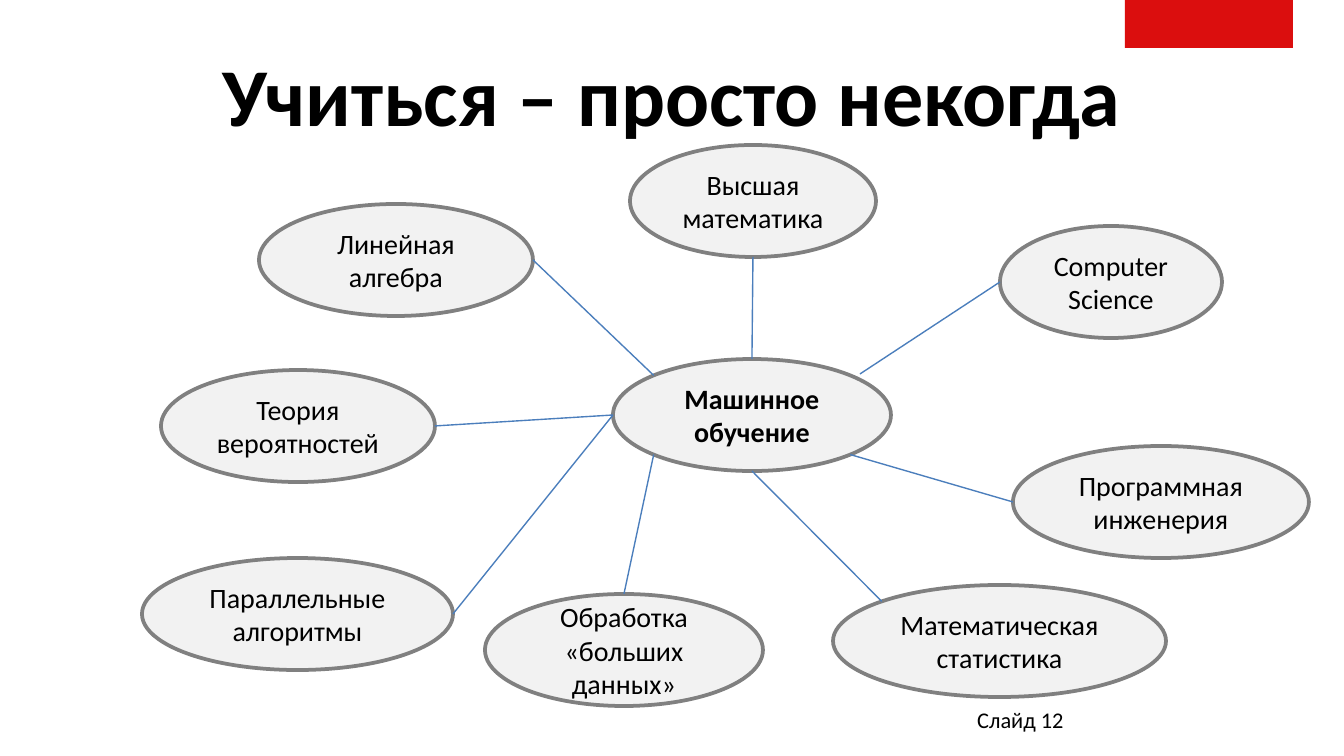
import math

from lxml import etree
from pptx import Presentation
from pptx import util as u
from pptx.dml.color import RGBColor
from pptx.enum import shapes, text
from pptx.oxml.ns import qn

# Content
TITLE = "Учиться – просто некогда"
FOOTER = "Слайд 12"
CORE = ("Машинное обучение", 613, 359, 278)
# Ellipse connection sites, counter-clockwise from the top
TOP, TOP_LEFT, LEFT, BOTTOM_LEFT, BOTTOM, BOTTOM_RIGHT, RIGHT = range(7)
# (label, left, top, width), site on the topic, site or free point at the core
TOPICS = [
    (("Computer Science", 1000, 226, 222), LEFT, (860, 374)),
    (("Высшая математика", 630, 145, 246), BOTTOM, TOP),
    (("Теория вероятностей", 161, 370, 274), RIGHT, LEFT),
    (("Математическая статистика", 833, 585, 333), TOP_LEFT, BOTTOM),
    (("Программная инженерия", 1013, 446, 296), LEFT, BOTTOM_RIGHT),
    (("Параллельные алгоритмы", 142, 558, 311), RIGHT, LEFT),
    (("Обработка «больших данных»", 485, 594, 278), TOP, BOTTOM_LEFT),
    (("Линейная алгебра", 259, 204, 274), RIGHT, TOP_LEFT),
]
OVAL_HEIGHT = 112

BLACK = RGBColor(0x00, 0x00, 0x00)
RED = RGBColor(0xDB, 0x0E, 0x0E)
PALE = RGBColor(0xF2, 0xF2, 0xF2)
GRAY = RGBColor(0x80, 0x80, 0x80)
BLUE = RGBColor(0x4B, 0x7E, 0xBC)
FONT = "Calibri"


def px(*lengths):
    return [round(n * 914400 / 134.4) for n in lengths]


def write(frame, words, size, bold=False, align=text.PP_ALIGN.CENTER):
    frame.word_wrap = True
    paragraph = frame.paragraphs[0]
    paragraph.alignment = align
    run = paragraph.add_run()
    run.text = words
    run.font.name, run.font.size, run.font.bold = FONT, u.Pt(size), bold
    run.font.color.rgb = BLACK


def add_oval(slide, label, left, top, width, bold=False):
    oval = slide.shapes.add_shape(shapes.MSO_SHAPE.OVAL, *px(left, top, width, OVAL_HEIGHT))
    oval.shadow.inherit = False
    oval.fill.solid()
    oval.fill.fore_color.rgb = PALE
    oval.line.color.rgb = GRAY
    oval.line.width = u.Pt(2)
    oval.text_frame.vertical_anchor = text.MSO_ANCHOR.MIDDLE
    write(oval.text_frame, label, 15, bold)
    return oval


def site_point(oval, site):
    angle = math.radians(90 + 45 * site)
    return (round(oval.left + oval.width / 2 * (1 + math.cos(angle))),
            round(oval.top + oval.height / 2 * (1 - math.sin(angle))))


def link(slide, topic, topic_site, core, core_end):
    joined = isinstance(core_end, int)
    start = site_point(topic, topic_site)
    end = site_point(core, core_end) if joined else px(*core_end)
    line = slide.shapes.add_connector(shapes.MSO_CONNECTOR.STRAIGHT, *start, *end)
    line.line.color.rgb = BLUE
    line.line.width = u.Pt(0.75)
    etree.SubElement(line._element.spPr, qn("a:effectLst"))
    # begin_connect knows only four sites, an ellipse has eight
    ends = [("a:stCxn", topic, topic_site)]
    if joined:
        ends.append(("a:endCxn", core, core_end))
    joints = line._element.find(".//" + qn("p:cNvCxnSpPr"))
    for tag, oval, site in ends:
        etree.SubElement(joints, qn(tag), id=str(oval.shape_id), idx=str(site))


def main():
    deck = Presentation()
    deck.slide_width, deck.slide_height = px(1344, 756)
    slide = deck.slides.add_slide(deck.slide_layouts[5])

    # Corner tab
    tab = slide.shapes.add_shape(shapes.MSO_SHAPE.RECTANGLE, *px(1125, 0, 168, 48))
    tab.shadow.inherit = False
    tab.fill.solid()
    tab.fill.fore_color.rgb = RED
    tab.line.fill.background()

    # Title and slide number
    title = slide.shapes.title
    title.left, title.top, title.width, title.height = px(67, 31, 1210, 126)
    title.text_frame.vertical_anchor = text.MSO_ANCHOR.MIDDLE
    write(title.text_frame, TITLE, 44, bold=True)
    footer = slide.shapes.add_textbox(*px(964, 700, 313, 40))
    write(footer.text_frame, FOOTER, 12, align=text.PP_ALIGN.LEFT)

    # Mind map
    core = add_oval(slide, *CORE, bold=True)
    for oval, topic_site, core_end in TOPICS:
        link(slide, add_oval(slide, *oval), topic_site, core, core_end)

    deck.save("out.pptx")


if __name__ == "__main__":
    main()
